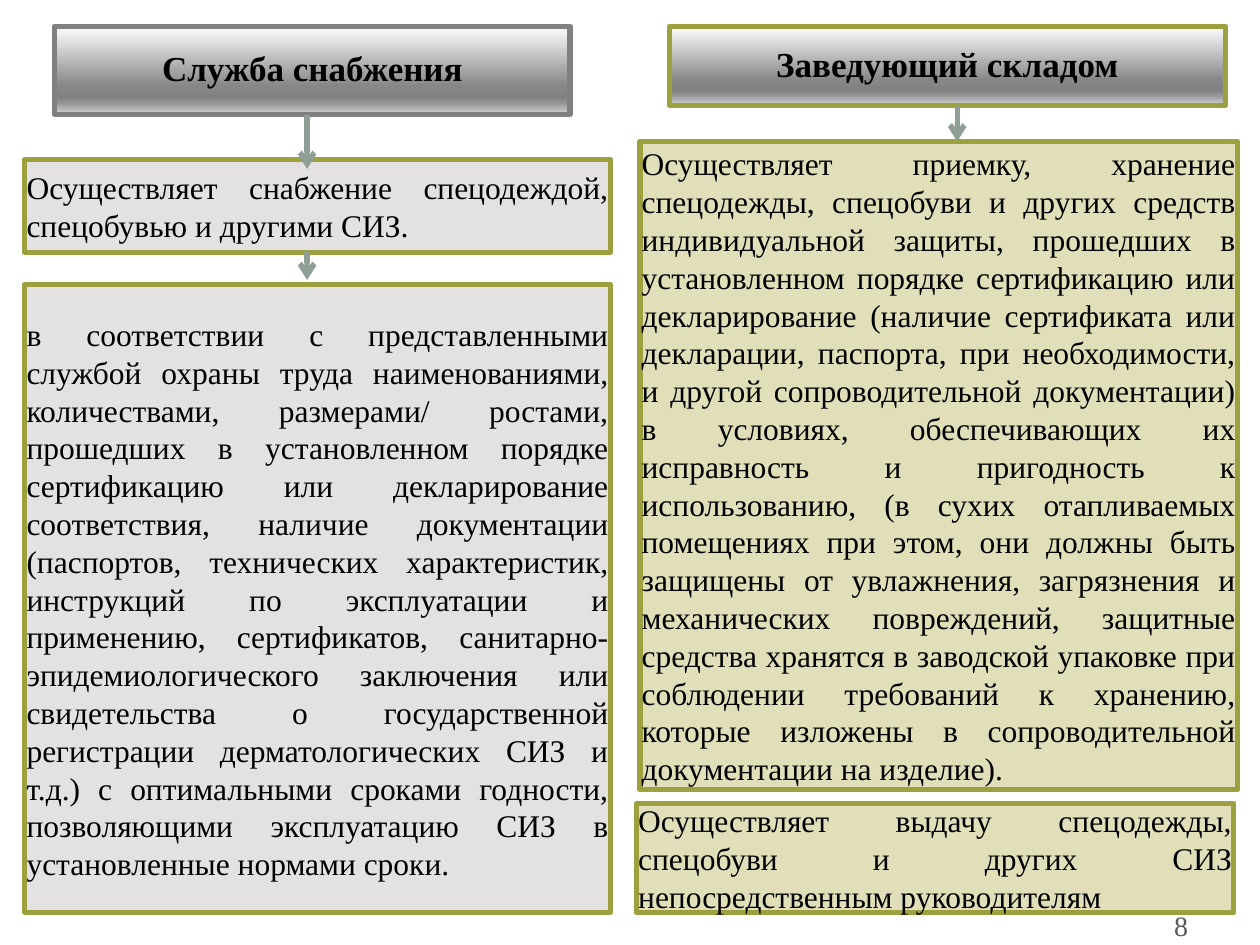
from dataclasses import dataclass

from lxml.etree import SubElement
from pptx import Presentation
from pptx.dml.color import RGBColor as Rgb
from pptx.enum.shapes import MSO_CONNECTOR as Link, MSO_SHAPE as Preset
from pptx.enum.text import MSO_ANCHOR as Anchor, MSO_AUTO_SIZE as Fit, PP_ALIGN as Align
from pptx.oxml.ns import qn
from pptx.slide import Slide
from pptx.util import Pt

COLORS = {
    "text": "000000",
    "number": "595959",
    "olive": "9DA03F",
    "gray": "808080",
    "arrow": "8F9F96",
    "supply": "E4E1E3",
    "storage": "E1DFBA",
}
METAL = [(0, "FEFEFE"), (68, "878787"), (81, "818181"), (86, "909090"), (100, "D3D3D3")]

SUPPLY_TASK = "Осуществляет снабжение спецодеждой, спецобувью и другими СИЗ."
SUPPLY_TERMS = (
    "в соответствии с представленными службой охраны труда наименованиями, количествами, "
    "размерами/ ростами, прошедших в установленном порядке сертификацию или декларирование "
    "соответствия, наличие документации (паспортов, технических характеристик, инструкций по "
    "эксплуатации и применению, сертификатов, санитарно-эпидемиологического заключения или "
    "свидетельства о государственной регистрации дерматологических СИЗ и т.д.) с оптимальными "
    "сроками годности, позволяющими эксплуатацию СИЗ в установленные нормами сроки."
)
STORAGE_TASK = (
    "Осуществляет приемку, хранение спецодежды, спецобуви и других средств индивидуальной "
    "защиты, прошедших в установленном порядке сертификацию или декларирование (наличие "
    "сертификата или декларации, паспорта, при необходимости, и другой сопроводительной "
    "документации) в условиях, обеспечивающих их исправность и пригодность к использованию, "
    "(в сухих отапливаемых помещениях при этом, они должны быть защищены от увлажнения, "
    "загрязнения и механических повреждений, защитные средства хранятся в заводской упаковке "
    "при соблюдении требований к хранению, которые изложены в сопроводительной документации "
    "на изделие)."
)
ISSUE_TASK = "Осуществляет выдачу спецодежды, спецобуви и других СИЗ непосредственным руководителям"


@dataclass
class Board:
    """Slide under construction together with its text and line style."""

    slide: Slide
    font: str = "Times New Roman"
    stroke: float = 3
    inset: float = 1

    def put_text(self, frame, text, size, align, color="text", bold=False, spacing=1.0):
        """Fill a text frame with one formatted paragraph."""
        frame.word_wrap = True
        frame.auto_size = Fit.NONE
        frame.vertical_anchor = Anchor.MIDDLE
        paragraph = frame.paragraphs[0]
        paragraph.alignment = align
        paragraph.line_spacing = spacing
        paragraph.space_before = paragraph.space_after = Pt(0)
        run = paragraph.add_run()
        run.text = text
        run.font.name, run.font.size, run.font.bold = self.font, Pt(size), bold
        run.font.color.rgb = Rgb.from_string(COLORS[color])

    def outline(self, shape, border):
        """Give a box its border and narrow margins."""
        shape.line.color.rgb = Rgb.from_string(COLORS[border])
        shape.line.width = Pt(self.stroke)
        frame = shape.text_frame
        frame.margin_left = frame.margin_right = Pt(self.inset)
        frame.margin_top = frame.margin_bottom = Pt(self.inset)

    def heading(self, idx, text, left, top, width, height, border):
        """Place a column heading with a metallic gradient."""
        shape = next(p for p in self.slide.placeholders if p.placeholder_format.idx == idx)
        shape.left, shape.top, shape.width, shape.height = map(Pt, (left, top, width, height))
        shape.fill.gradient()
        shape.fill.gradient_angle = 270
        stops = next(shape.element.iter(qn("a:gsLst")))
        for stop in list(stops):
            stops.remove(stop)
        for percent, tone in METAL:
            stop = SubElement(stops, qn("a:gs"), pos=str(percent * 1000))
            SubElement(stop, qn("a:srgbClr"), val=tone)
        self.outline(shape, border)
        self.put_text(shape.text_frame, text, 20, Align.CENTER, bold=True, spacing=0.9)

    def duty(self, text, left, top, width, height, fill):
        """Place a box describing a duty."""
        shape = self.slide.shapes.add_shape(
            Preset.RECTANGLE, *map(Pt, (left, top, width, height)))
        shape.shadow.inherit = False
        shape.fill.solid()
        shape.fill.fore_color.rgb = Rgb.from_string(COLORS[fill])
        self.outline(shape, "olive")
        self.put_text(shape.text_frame, text, 18, Align.JUSTIFY)

    def arrow(self, x, top, bottom):
        """Draw a downward arrow."""
        link = self.slide.shapes.add_connector(
            Link.STRAIGHT, *map(Pt, (x, top, x, bottom)))
        link.line.color.rgb = Rgb.from_string(COLORS["arrow"])
        link.line.width = Pt(self.stroke)
        SubElement(next(link.element.iter(qn("a:ln"))), qn("a:tailEnd"), type="arrow")
        SubElement(link.element.spPr, qn("a:effectLst"))

    def number(self, text, left, top, width, height):
        """Place the slide number."""
        box = self.slide.shapes.add_textbox(*map(Pt, (left, top, width, height)))
        self.put_text(box.text_frame, text, 16, Align.RIGHT, color="number")

    def clear_empty(self):
        """Remove placeholders left without text."""
        for holder in list(self.slide.placeholders):
            if not holder.text_frame.text:
                holder.element.getparent().remove(holder.element)


def main():
    """Build the slide and save it."""
    deck = Presentation()
    deck.slide_width, deck.slide_height = Pt(720), Pt(540)
    comparison = deck.slide_layouts.get_by_name("Comparison")
    board = Board(deck.slides.add_slide(comparison))

    board.heading(1, "Служба снабжения", 31.2, 15, 294.6, 50.4, "gray")
    board.duty(SUPPLY_TASK, 14.2, 91, 334.6, 53.2, "supply")
    board.duty(SUPPLY_TERMS, 14.2, 162.5, 334.6, 359, "supply")
    board.arrow(175.5, 65.5, 96.5)
    board.arrow(175.5, 144.2, 160)

    board.heading(3, "Заведующий складом", 382.5, 15, 317.7, 45.3, "olive")
    board.duty(STORAGE_TASK, 365.7, 80.8, 341.4, 370.6, "storage")
    board.duty(ISSUE_TASK, 363.7, 459, 341.4, 62.5, "storage")
    board.arrow(547, 60.5, 80.8)

    board.number("8", 617, 519.2, 69, 19.4)
    board.clear_empty()
    deck.save("out.pptx")


if __name__ == "__main__":
    main()
